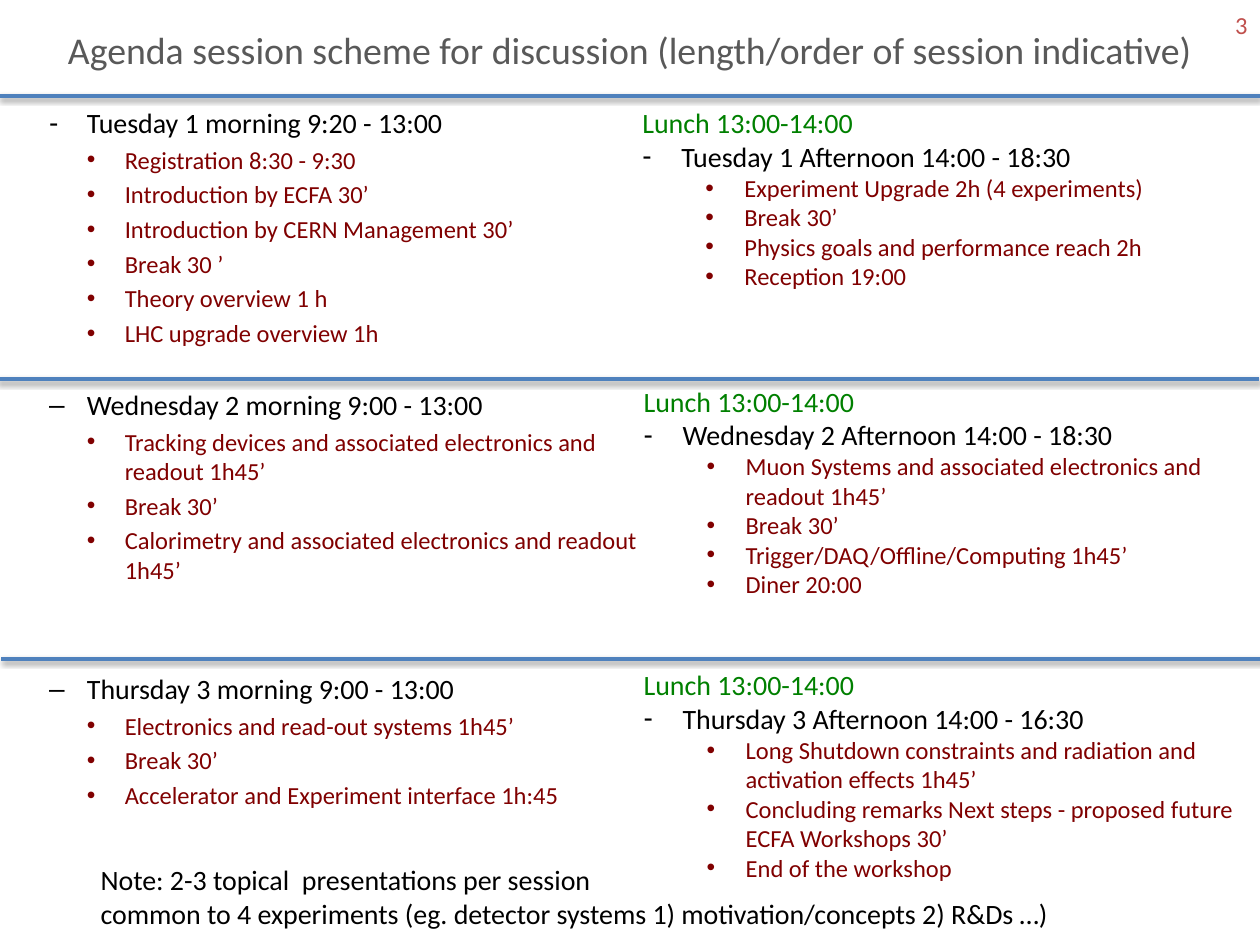
from dataclasses import dataclass

from lxml.etree import SubElement
from pptx import Presentation
from pptx.dml.color import RGBColor
from pptx.enum.shapes import MSO_CONNECTOR
from pptx.enum.text import MSO_ANCHOR, MSO_AUTO_SIZE, PP_ALIGN
from pptx.oxml.ns import qn
from pptx.util import Inches, Pt


@dataclass(frozen=True)
class Theme:
    font: str = "Calibri"
    bullet_font: str = "Arial"
    title: str = "595959"
    number: str = "C0504D"
    heading: str = "000000"
    item: str = "800000"
    lunch: str = "008000"
    rule: str = "4F81BD"
    shadow: str = "000000"
    title_size: float = 21.6
    heading_size: float = 16
    item_size: float = 14
    rule_width: float = 2
    space: float = 3


@dataclass(frozen=True)
class Day:
    dash: str
    gap: float
    morning: str
    morning_items: tuple
    afternoon: str
    afternoon_items: tuple
    afternoon_box: tuple


THEME = Theme()
COLUMN = Inches(10) // 100
ROW = Inches(7.5) // 75
LUNCH = "Lunch 13:00-14:00"

TITLE_BOX = (0, 0.2, 100, 7.4)
NUMBER_BOX = (89, 0, 11, 4)
MORNING_BOX = (-0.1, 7.9, 52.9, 55.2)
NOTE_BOX = (7, 68, 82.6, 6.4)
RULES = ((0, 7.6), (-0.1, 30.1), (0.1, 52.3))

DAYS = (
    Day("-", THEME.space,
        "Tuesday 1 morning 9:20 - 13:00",
        ("Registration 8:30 - 9:30", "Introduction by ECFA 30’",
         "Introduction by CERN Management 30’", "Break 30 ’",
         "Theory overview 1 h", "LHC upgrade overview 1h"),
        "Tuesday 1 Afternoon 14:00 - 18:30",
        ("Experiment Upgrade 2h (4 experiments)", "Break 30’",
         "Physics goals and performance reach 2h", "Reception 19:00"),
        (50, 7.9, 50, 15.8)),
    Day("–", 23,
        "Wednesday 2 morning 9:00 - 13:00",
        ("Tracking devices and associated electronics and readout 1h45’",
         "Break 30’",
         "Calorimetry and associated electronics and readout 1h45’"),
        "Wednesday 2 Afternoon 14:00 - 18:30",
        ("Muon Systems and associated electronics and readout 1h45’",
         "Break 30’", "Trigger/DAQ/Offline/Computing 1h45’", "Diner 20:00"),
        (50.1, 30, 50, 18.2)),
    Day("–", 50,
        "Thursday 3 morning 9:00 - 13:00",
        ("Electronics and read-out systems 1h45’", "Break 30’",
         "Accelerator and Experiment interface 1h:45"),
        "Thursday 3 Afternoon 14:00 - 16:30",
        ("Long Shutdown constraints and radiation and activation effects 1h45’",
         "Concluding remarks Next steps - proposed future ECFA Workshops 30’",
         "End of the workshop"),
        (50.1, 52.5, 50, 18.2)),
)
NOTE = (
    "Note: 2-3 topical  presentations per session",
    "common to 4 experiments (eg. detector systems 1) motivation/concepts 2) R&Ds …)",
)


def lengths(box):
    left, top, width, height = box
    return (round(left * COLUMN), round(top * ROW),
            round(width * COLUMN), round(height * ROW))


def place(shape, box):
    shape.left, shape.top, shape.width, shape.height = lengths(box)


def prepare(frame, anchor=MSO_ANCHOR.TOP):
    frame.word_wrap = True
    frame.auto_size = MSO_AUTO_SIZE.NONE
    frame.vertical_anchor = anchor
    return frame


def add_text_frame(slide, box, anchor=MSO_ANCHOR.TOP):
    return prepare(slide.shapes.add_textbox(*lengths(box)).text_frame, anchor)


def add_run(paragraph, text, size, color):
    run = paragraph.add_run()
    run.text = text
    run.font.name = THEME.font
    run.font.size = Pt(size)
    run.font.color.rgb = RGBColor.from_string(color)


def next_paragraph(frame):
    first = frame.paragraphs[0]
    return first if not first.runs else frame.add_paragraph()


def add_bullet(paragraph, mark, level, margin, hanging, space):
    paragraph.level = level
    paragraph.space_before = Pt(space)
    properties = paragraph._p.get_or_add_pPr()
    properties.set("marL", str(round(margin * COLUMN)))
    properties.set("indent", str(round(-hanging * COLUMN)))
    SubElement(properties, qn("a:buFont"), typeface=THEME.bullet_font)
    SubElement(properties, qn("a:buChar"), char=mark)


def add_session(frame, heading, items, dash, levels, margins, hanging, gap, space):
    entries = [(heading, dash, THEME.heading_size, THEME.heading, 0, gap)]
    entries += [(item, "•", THEME.item_size, THEME.item, 1, space) for item in items]
    for text, mark, size, color, depth, before in entries:
        paragraph = next_paragraph(frame)
        add_bullet(paragraph, mark, levels[depth], margins[depth], hanging, before)
        add_run(paragraph, text, size, color)


def add_header(slide, title_box, number_box):
    title = slide.shapes.title
    place(title, title_box)
    paragraph = prepare(title.text_frame, MSO_ANCHOR.MIDDLE).paragraphs[0]
    paragraph.alignment = PP_ALIGN.CENTER
    add_run(paragraph,
            "Agenda session scheme for discussion (length/order of session indicative)",
            THEME.title_size, THEME.title)
    paragraph = add_text_frame(slide, number_box, MSO_ANCHOR.MIDDLE).paragraphs[0]
    paragraph.alignment = PP_ALIGN.RIGHT
    add_run(paragraph, "3", THEME.item_size, THEME.number)


def add_mornings(slide, box):
    body = slide.placeholders[1]
    place(body, box)
    frame = prepare(body.text_frame)
    for day in DAYS:
        add_session(frame, day.morning, day.morning_items, day.dash,
                    (1, 2), (6, 9), 3, day.gap, THEME.space)


def add_afternoon(slide, day, box):
    frame = add_text_frame(slide, box)
    add_run(frame.paragraphs[0], LUNCH, THEME.heading_size, THEME.lunch)
    add_session(frame, day.afternoon, day.afternoon_items, "-",
                (0, 1), (3.1, 8.1), 3.1, 0, 0)


def add_note(slide, box):
    frame = add_text_frame(slide, box)
    for text in NOTE:
        add_run(next_paragraph(frame), text, THEME.heading_size, THEME.heading)


def add_rule(slide, left, top):
    start, height, width, _ = lengths((left, top, 100, 0))
    rule = slide.shapes.add_connector(
        MSO_CONNECTOR.STRAIGHT, start, height, start + width, height)
    rule.line.color.rgb = RGBColor.from_string(THEME.rule)
    rule.line.width = Pt(THEME.rule_width)
    effects = SubElement(rule._element.spPr, qn("a:effectLst"))
    shadow = SubElement(effects, qn("a:outerShdw"), blurRad=str(Pt(3.1)),
                        dist=str(Pt(1.6)), dir="5400000", rotWithShape="0")
    color = SubElement(shadow, qn("a:srgbClr"), val=THEME.shadow)
    SubElement(color, qn("a:alpha"), val="38000")


def main():
    presentation = Presentation()
    presentation.slide_width = 100 * COLUMN
    presentation.slide_height = 75 * ROW
    slide = presentation.slides.add_slide(presentation.slide_layouts[1])
    add_header(slide, TITLE_BOX, NUMBER_BOX)
    add_mornings(slide, MORNING_BOX)
    for day in DAYS:
        add_afternoon(slide, day, day.afternoon_box)
    add_note(slide, NOTE_BOX)
    for left, top in RULES:
        add_rule(slide, left, top)
    presentation.save("out.pptx")


if __name__ == "__main__":
    main()
